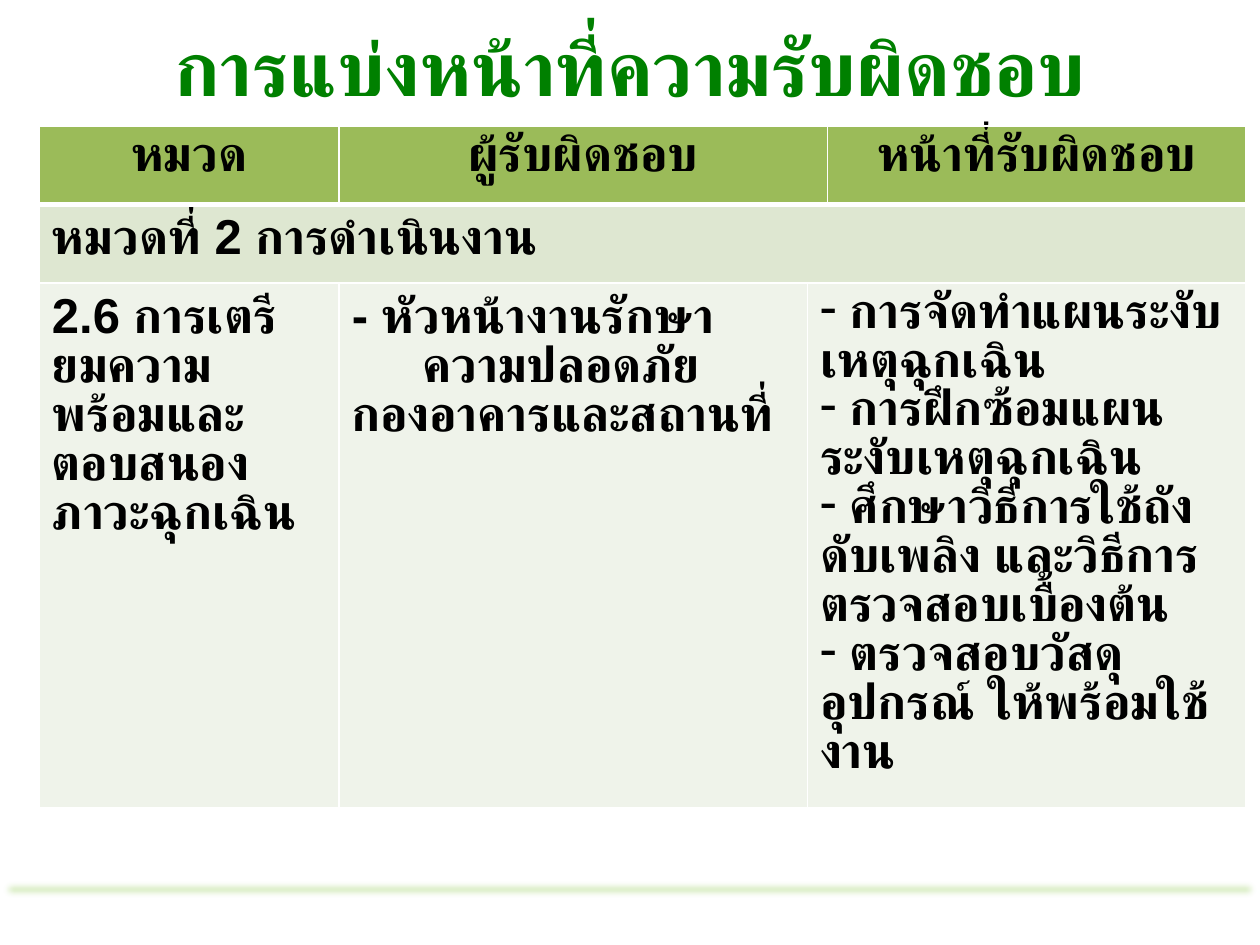
from dataclasses import dataclass

from lxml.etree import SubElement
from pptx import Presentation
from pptx.dml.color import RGBColor
from pptx.enum.shapes import MSO_SHAPE
from pptx.enum.text import MSO_ANCHOR, PP_ALIGN
from pptx.oxml.ns import qn
from pptx.slide import Slide
from pptx.table import Table, _Cell
from pptx.text.text import TextFrame
from pptx.util import Pt

WHITE = RGBColor(0xFF, 0xFF, 0xFF)
BLACK = RGBColor(0, 0, 0)
TITLE_GREEN = RGBColor(0, 0x80, 0)
HEADER_GREEN = RGBColor(0x9B, 0xBB, 0x59)
SECTION_GREEN = RGBColor(0xDE, 0xE7, 0xD1)
DETAIL_GREEN = RGBColor(0xEF, 0xF3, 0xEA)
FOOTER_GREEN = RGBColor(0x7E, 0xC2, 0x34)

COLUMN_WIDTHS = (171.3, 267.6, 11.4, 238.9)
ROW_HEIGHTS = (44.8, 44.8, 300)


@dataclass(frozen=True)
class Entry:
    row: int
    column: int
    lines: tuple[str, ...]
    span: int = 1
    align: PP_ALIGN = PP_ALIGN.LEFT
    hanging: float = 0
    bullet: str = ""


ROW_FILLS = (HEADER_GREEN, SECTION_GREEN, DETAIL_GREEN)
ENTRIES = (
    Entry(0, 0, ("หมวด",), align=PP_ALIGN.CENTER),
    Entry(0, 1, ("ผู้รับผิดชอบ",), span=2, align=PP_ALIGN.CENTER),
    Entry(0, 3, ("หน้าที่รับผิดชอบ",), align=PP_ALIGN.CENTER),
    Entry(1, 0, ("หมวดที่ 2 การดำเนินงาน",), span=4),
    Entry(2, 0, ("2.6 การเตรียมความพร้อมและตอบสนองภาวะฉุกเฉิน",)),
    Entry(2, 1, ("- หัวหน้างานรักษาความปลอดภัย", "กองอาคารและสถานที่"), hanging=40.5),
    Entry(
        2,
        2,
        (
            " การจัดทำแผนระงับเหตุฉุกเฉิน",
            " การฝึกซ้อมแผนระงับเหตุฉุกเฉิน",
            " ศึกษาวิธีการใช้ถังดับเพลิง และวิธีการตรวจสอบเบื้องต้น",
            " ตรวจสอบวัสดุ อุปกรณ์ ให้พร้อมใช้งาน",
        ),
        span=2,
        bullet="-",
    ),
)


def write_text(
    frame: TextFrame,
    lines: tuple[str, ...],
    *,
    size: float = 28,
    font: str = "Arial",
    color: RGBColor = BLACK,
    align: PP_ALIGN = PP_ALIGN.LEFT,
    hanging: float = 0,
    bullet: str = "",
) -> None:
    frame.word_wrap = True
    for index, line in enumerate(lines):
        paragraph = frame.add_paragraph() if index else frame.paragraphs[0]
        paragraph.alignment = align
        properties = paragraph._p.get_or_add_pPr()
        if hanging:
            properties.set("marL", str(Pt(hanging)))
            properties.set("indent", str(-Pt(hanging)))
        if bullet:
            SubElement(properties, qn("a:buFontTx"))
            SubElement(properties, qn("a:buChar"), char=bullet)
        run = paragraph.add_run()
        run.text = line
        run.font.size = Pt(size)
        run.font.name = font
        run.font.bold = True
        run.font.color.rgb = color


def style_cell(cell: _Cell, fill: RGBColor, bottom_width: float) -> None:
    properties = cell._tc.get_or_add_tcPr()
    for side, width in (("L", 1), ("R", 1), ("T", 1), ("B", bottom_width)):
        border = SubElement(properties, qn(f"a:ln{side}"), w=str(Pt(width)))
        border_fill = SubElement(border, qn("a:solidFill"))
        SubElement(border_fill, qn("a:srgbClr"), val=str(WHITE))
    cell.fill.solid()
    cell.fill.fore_color.rgb = fill


def fill_entry(table: Table, entry: Entry) -> None:
    cell = table.cell(entry.row, entry.column)
    if entry.span > 1:
        cell.merge(table.cell(entry.row, entry.column + entry.span - 1))
    write_text(
        cell.text_frame,
        entry.lines,
        align=entry.align,
        hanging=entry.hanging,
        bullet=entry.bullet,
    )


def add_footer_glow(slide: Slide) -> None:
    footer = slide.shapes.add_shape(
        MSO_SHAPE.RECTANGLE, Pt(0), Pt(502.5), Pt(720), Pt(11.5)
    )
    footer.fill.solid()
    footer.fill.fore_color.rgb = FOOTER_GREEN
    footer.line.fill.background()
    footer.shadow.inherit = False
    effects = footer._element.spPr.find(qn("a:effectLst"))
    SubElement(effects, qn("a:softEdge"), rad=str(Pt(5)))


def add_duty_table(slide: Slide) -> None:
    table = slide.shapes.add_table(
        len(ROW_HEIGHTS),
        len(COLUMN_WIDTHS),
        Pt(22.5),
        Pt(72),
        Pt(sum(COLUMN_WIDTHS)),
        Pt(sum(ROW_HEIGHTS)),
    ).table
    for column, width in zip(table.columns, COLUMN_WIDTHS):
        column.width = Pt(width)
    for index, (row, height) in enumerate(zip(table.rows, ROW_HEIGHTS)):
        row.height = Pt(height)
        for cell in row.cells:
            style_cell(cell, ROW_FILLS[index], 1 if index else 3)
    for entry in ENTRIES:
        fill_entry(table, entry)


def add_title(slide: Slide) -> None:
    title = slide.shapes.add_textbox(Pt(36), Pt(6), Pt(648), Pt(62.5))
    title.text_frame.vertical_anchor = MSO_ANCHOR.MIDDLE
    write_text(
        title.text_frame,
        ("การแบ่งหน้าที่ความรับผิดชอบ",),
        size=44,
        font="Calibri",
        color=TITLE_GREEN,
        align=PP_ALIGN.CENTER,
    )


def main() -> None:
    presentation = Presentation()
    presentation.slide_width = Pt(720)
    presentation.slide_height = Pt(540)
    slide = presentation.slides.add_slide(presentation.slide_layouts[6])
    add_footer_glow(slide)
    add_duty_table(slide)
    add_title(slide)
    presentation.save("out.pptx")


if __name__ == "__main__":
    main()
